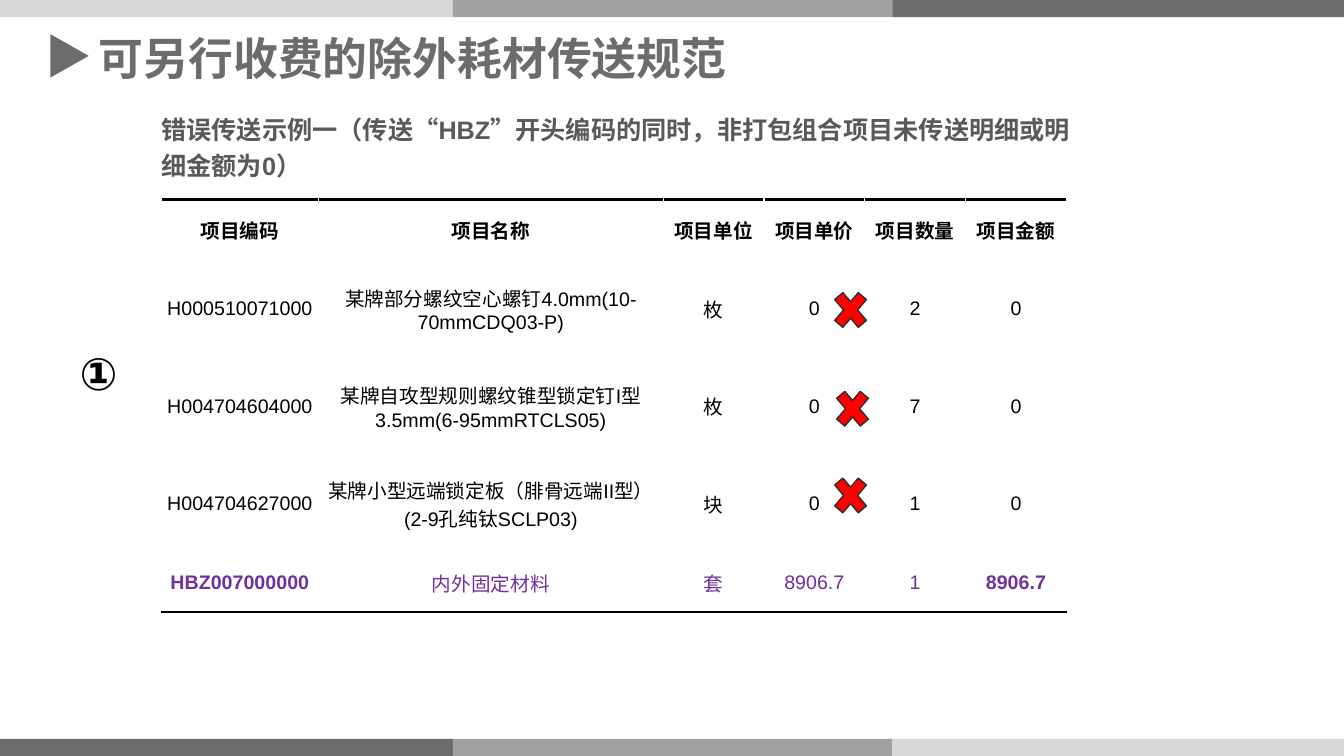
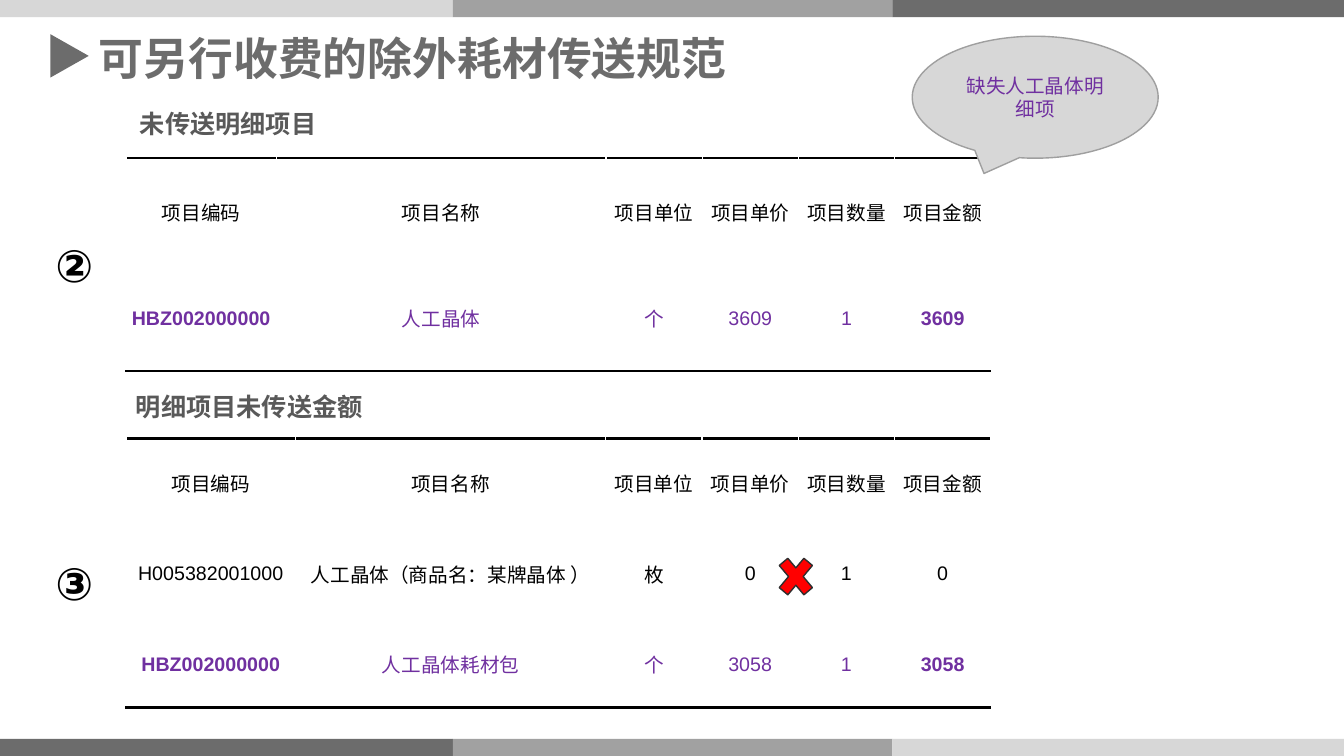
from dataclasses import dataclass
from itertools import pairwise

from lxml.etree import SubElement
from pptx import Presentation
from pptx.dml.color import RGBColor
from pptx.enum.shapes import MSO_SHAPE
from pptx.enum.text import MSO_ANCHOR, MSO_AUTO_SIZE, PP_ALIGN
from pptx.oxml.ns import qn
from pptx.util import Inches, Pt


@dataclass(frozen=True)
class Theme:
    dark: RGBColor = RGBColor(0x6C, 0x6C, 0x6C)
    middle: RGBColor = RGBColor(0xA1, 0xA1, 0xA1)
    light: RGBColor = RGBColor(0xD7, 0xD7, 0xD7)
    heading: RGBColor = RGBColor(0x59, 0x59, 0x59)
    black: RGBColor = RGBColor(0, 0, 0)
    white: RGBColor = RGBColor(0xFF, 0xFF, 0xFF)
    purple: RGBColor = RGBColor(0x70, 0x30, 0xA0)
    red: RGBColor = RGBColor(0xFF, 0, 0)
    cross_line: RGBColor = RGBColor(0x2E, 0x2E, 0x2E)
    bubble_line: RGBColor = RGBColor(0x9F, 0x9F, 0x9F)
    latin: str = "Arial"
    chinese: str = "Noto Sans CJK SC"
    title_size: int = 32
    heading_size: int = 18
    table_size: int = 14


theme = Theme()
deck = Presentation()
deck.slide_width, deck.slide_height = Inches(13.33), Inches(7.5)


def frame(left, top, width, height):
    across, down = deck.slide_width / 100, deck.slide_height / 100
    return [round(left * across), round(top * down), round(width * across), round(height * down)]


def style(para, size, color, bold=False, name=theme.latin, align=PP_ALIGN.LEFT):
    para.alignment = align
    font = para.font
    font.size, font.bold, font.name = Pt(size), bold, name
    font.color.rgb = color
    SubElement(font._rPr, qn("a:ea"), typeface=theme.chinese)


header = ["项目编码", "项目名称", "项目单位", "项目单价", "项目数量", "项目金额"]
pages = [
    {
        "headings": [
            ("错误传送示例一（传送“HBZ”开头编码的同时，非打包组合项目未传送明细或明细金额为0）",
             (12, 11.87, 68, 14.53), 0, 1.2),
        ],
        "tables": [
            {
                "corner": (12, 26.4),
                "columns": [11.7, 25.65] + [7.5] * 4,
                "rows": [7.87, 12.93, 12.93, 12.93, 7.87],
                "bold_header": True,
                "items": [
                    ["H000510071000", "某牌部分螺纹空心螺钉4.0mm(10-70mmCDQ03-P)", "枚", "0", "2", "0"],
                    ["H004704604000", "某牌自攻型规则螺纹锥型锁定钉I型3.5mm(6-95mmRTCLS05)", "枚", "0", "7", "0"],
                    ["H004704627000", "某牌小型远端锁定板（腓骨远端II型）(2-9孔纯钛SCLP03)", "块", "0", "1", "0"],
                    ["HBZ007000000", "内外固定材料", "套", "8906.7", "1", "8906.7"],
                ],
            },
        ],
        "crosses": [(61.6, 37.47, 3.38, 7.07), (61.75, 50.53, 3.38, 7.07), (61.6, 62, 3.38, 7.07)],
        "numbers": [("①", 5.18, 45.07)],
        "bubbles": [],
    },
    {
        "headings": [
            ("未传送明细项目", (9.68, 13.6, 52.5, 5.33), 0.1, 1),
            ("明细项目未传送金额", (9.38, 51.07, 52.5, 5.33), 0.1, 1),
        ],
        "tables": [
            {
                "corner": (9.38, 20.93),
                "columns": [11.18, 24.53] + [7.16] * 4,
                "rows": [14.07, 14.07],
                "bold_header": False,
                "items": [["HBZ002000000", "人工晶体", "个", "3609", "1", "3609"]],
            },
            {
                "corner": (9.38, 58),
                "columns": [12.6, 23.1] + [7.16] * 4,
                "rows": [11.6, 12.4, 11.6],
                "bold_header": False,
                "items": [
                    ["H005382001000", "人工晶体（商品名：某牌晶体 ）", "枚", "0", "1", "0"],
                    ["HBZ002000000", "人工晶体耗材包", "个", "3058", "1", "3058"],
                ],
            },
        ],
        "crosses": [(57.45, 72.53, 3.53, 7.47)],
        "numbers": [("②", 3.38, 30.8), ("③", 3.38, 72.8)],
        "bubbles": [("缺失人工晶体明细项", (67.88, 4.8, 18.3, 16.13))],
    },
]

layout = deck.slide_layouts[5]
for holder in list(layout.placeholders):
    if holder.placeholder_format.idx == 0:
        holder.left, holder.top, holder.width, holder.height = frame(6.6, 3.33, 51.9, 8.53)
    else:
        holder.element.getparent().remove(holder.element)

slides = [deck.slides.add_slide(layout) for page in pages]

shades = [theme.light, theme.middle, theme.dark]
decor = [(MSO_SHAPE.RIGHT_ARROW, (3.75, 4.53, 2.85, 5.73), theme.dark)]
for top, colors in [(0, shades), (97.73, shades[::-1])]:
    for (left, right), color in zip(pairwise([0, 33.7, 66.4, 100]), colors):
        decor.append((MSO_SHAPE.RECTANGLE, (left, top, right - left, 2.27), color))
for kind, place, color in decor:
    shape = slides[0].shapes.add_shape(kind, *frame(*place))
    shape.shadow.inherit = False
    shape.fill.solid()
    shape.fill.fore_color.rgb = color
    shape.line.fill.background()
    if kind == MSO_SHAPE.RIGHT_ARROW:
        shape.adjustments[0], shape.adjustments[1] = 0.5, 1
    layout.shapes.element.append(shape.element)

for slide, page in zip(slides, pages):
    title = slide.shapes.title
    title.text_frame.text = "可另行收费的除外耗材传送规范"
    title.text_frame.auto_size = MSO_AUTO_SIZE.NONE
    style(title.text_frame.paragraphs[0], theme.title_size, theme.dark, True, theme.chinese)

    for text, place, inset, spacing in page["headings"]:
        box = slide.shapes.add_textbox(*frame(*place))
        body = box.text_frame
        body.word_wrap = True
        body.vertical_anchor = MSO_ANCHOR.MIDDLE
        body.margin_left = body.margin_right = Inches(inset)
        body.margin_top = body.margin_bottom = Inches(inset / 2)
        body.text = text
        body.paragraphs[0].line_spacing = spacing
        style(body.paragraphs[0], theme.heading_size, theme.heading, True)

    for spec_table in page["tables"]:
        columns, rows = spec_table["columns"], spec_table["rows"]
        place = frame(*spec_table["corner"], sum(columns), sum(rows))
        table = slide.shapes.add_table(len(rows), len(columns), *place).table
        table.first_row = table.horz_banding = False
        for column, width in zip(table.columns, columns):
            column.width = frame(0, 0, width, 0)[2]
        for row, height in zip(table.rows, rows):
            row.height = frame(0, 0, 0, height)[3]
        last = len(rows) - 1
        for row_index, texts in enumerate([header] + spec_table["items"]):
            for column_index, text in enumerate(texts):
                cell = table.cell(row_index, column_index)
                cell.text = text
                cell.vertical_anchor = MSO_ANCHOR.MIDDLE
                cell.margin_left = cell.margin_right = cell.margin_top = Inches(0.01)
                cell.margin_bottom = 0
                is_total = row_index == last
                bold = is_total and column_index in (0, 5) or row_index == 0 and spec_table["bold_header"]
                style(cell.text_frame.paragraphs[0], theme.table_size,
                      theme.purple if is_total else theme.black, bold, align=PP_ALIGN.CENTER)
                edge = {0: "a:lnT", last: "a:lnB"}.get(row_index)
                if edge:
                    line = SubElement(cell._tc.get_or_add_tcPr(), qn(edge), w=str(Pt(2)))
                    paint = SubElement(line, qn("a:solidFill"))
                    SubElement(paint, qn("a:srgbClr"), val=str(theme.black))
                cell.fill.solid()
                cell.fill.fore_color.rgb = theme.white

    for place in page["crosses"]:
        cross = slide.shapes.add_shape(MSO_SHAPE.MATH_MULTIPLY, *frame(*place))
        cross.shadow.inherit = False
        cross.fill.solid()
        cross.fill.fore_color.rgb = theme.red
        cross.line.color.rgb = theme.cross_line
        cross.line.width = Pt(1)

    for text, left, top in page["numbers"]:
        box = slide.shapes.add_textbox(*frame(left, top, 4.88, 8.53))
        box.text_frame.word_wrap = False
        box.text_frame.text = text
        style(box.text_frame.paragraphs[0], theme.title_size, theme.black, True)

    for text, place in page["bubbles"]:
        bubble = slide.shapes.add_shape(MSO_SHAPE.OVAL_CALLOUT, *frame(*place))
        bubble.shadow.inherit = False
        bubble.fill.solid()
        bubble.fill.fore_color.rgb = theme.light
        bubble.line.color.rgb = theme.bubble_line
        bubble.line.width = Pt(1)
        bubble.text_frame.word_wrap = True
        bubble.text_frame.vertical_anchor = MSO_ANCHOR.MIDDLE
        bubble.text_frame.text = text
        style(bubble.text_frame.paragraphs[0], theme.table_size, theme.purple,
              name=theme.chinese, align=PP_ALIGN.CENTER)

deck.save("out.pptx")
